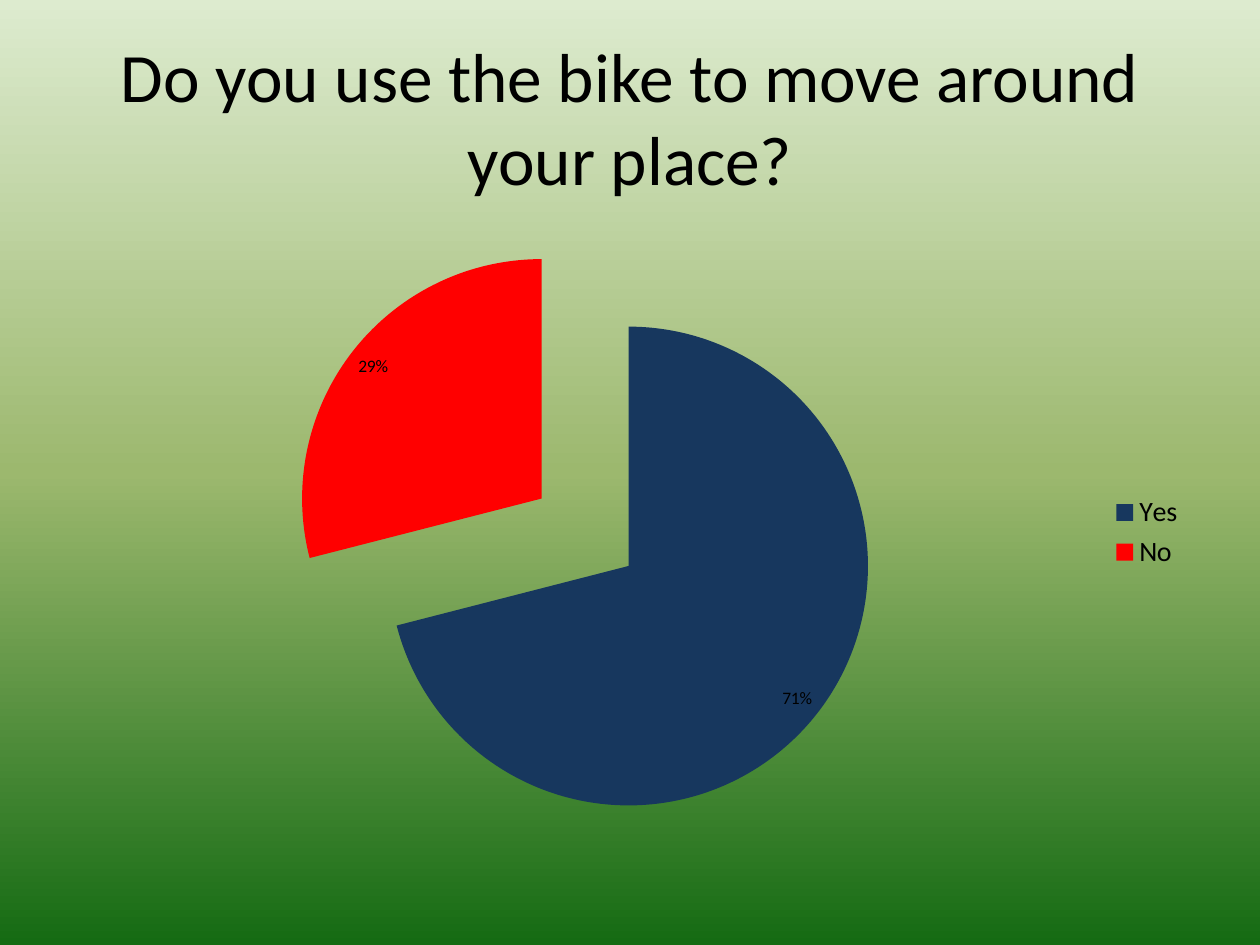
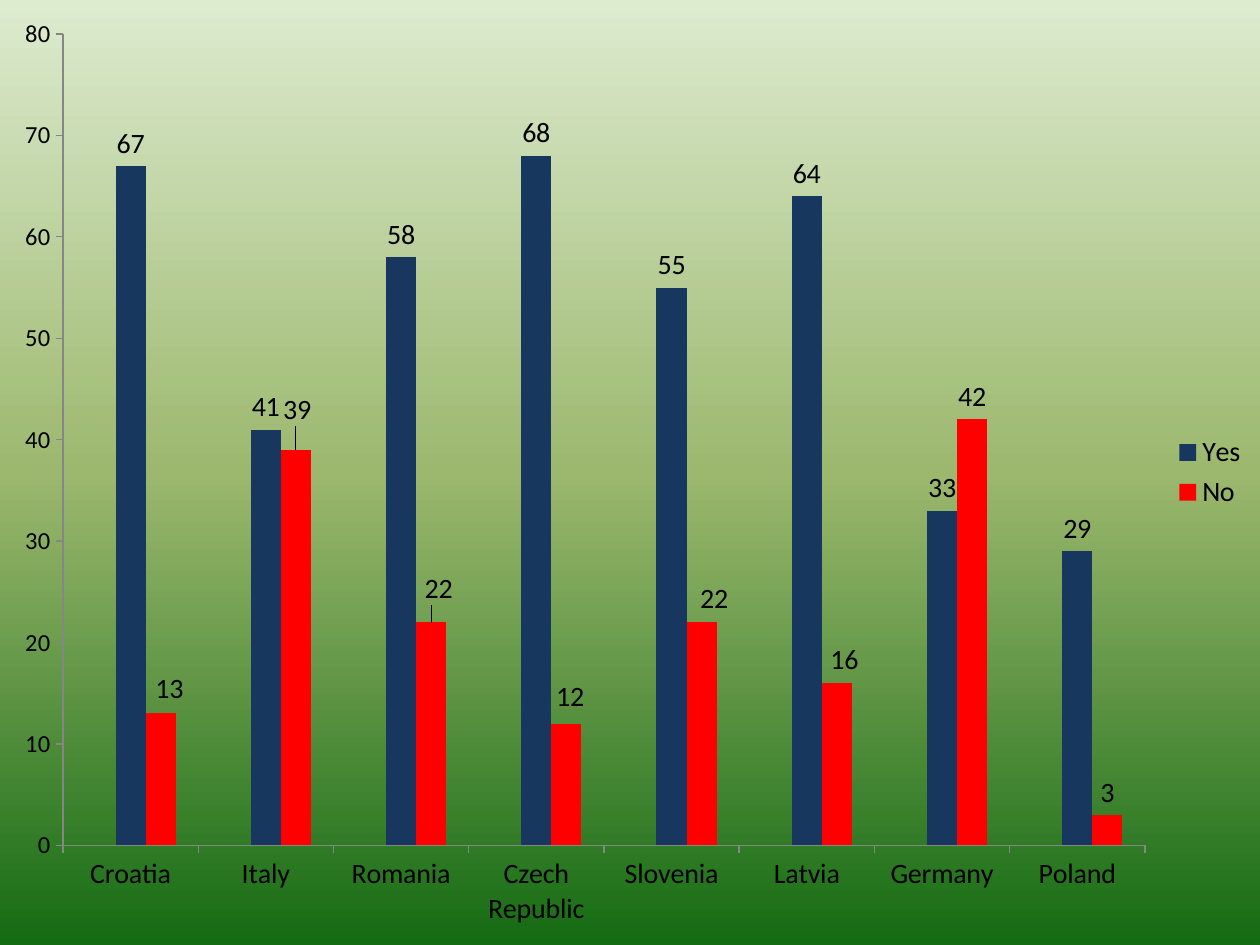
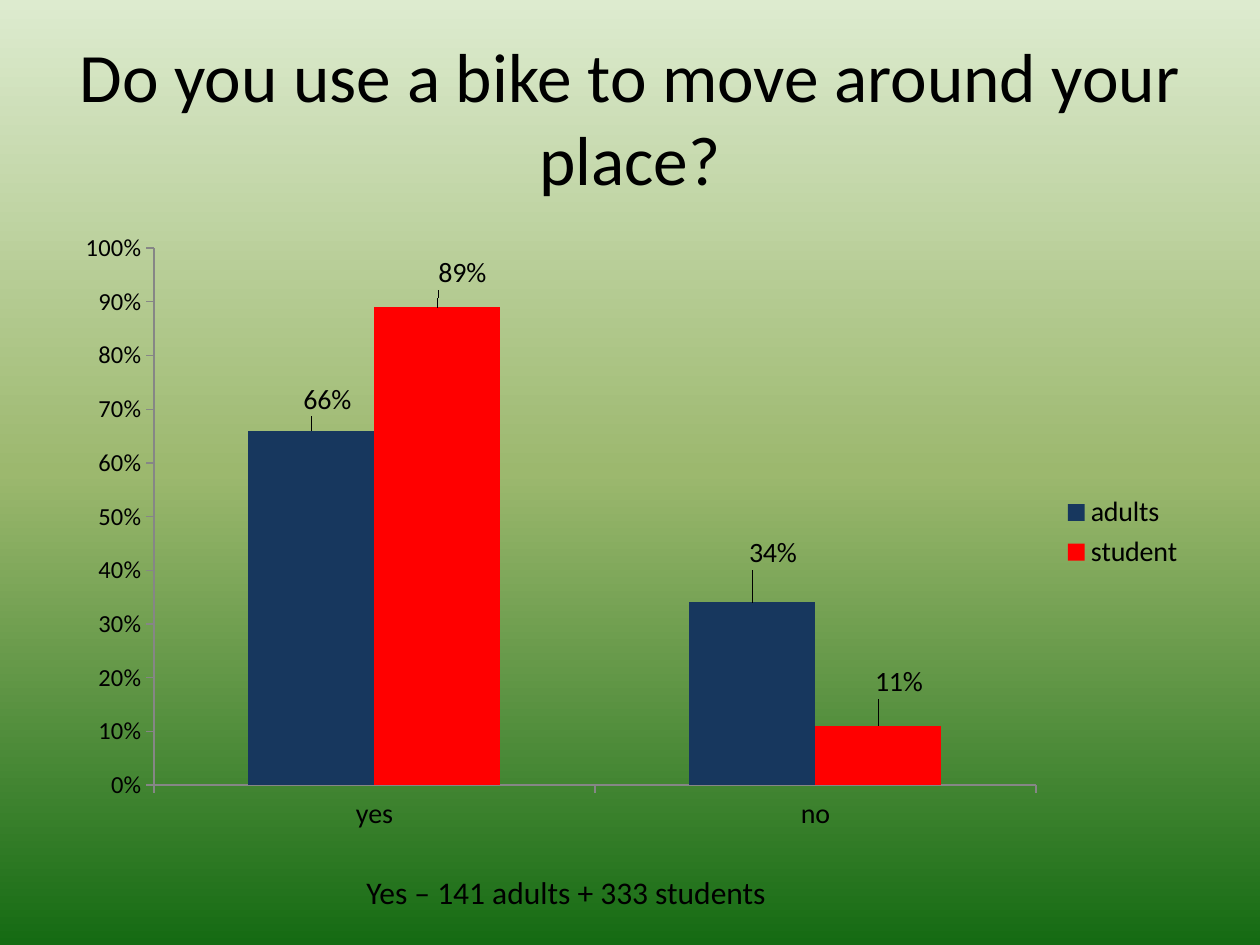
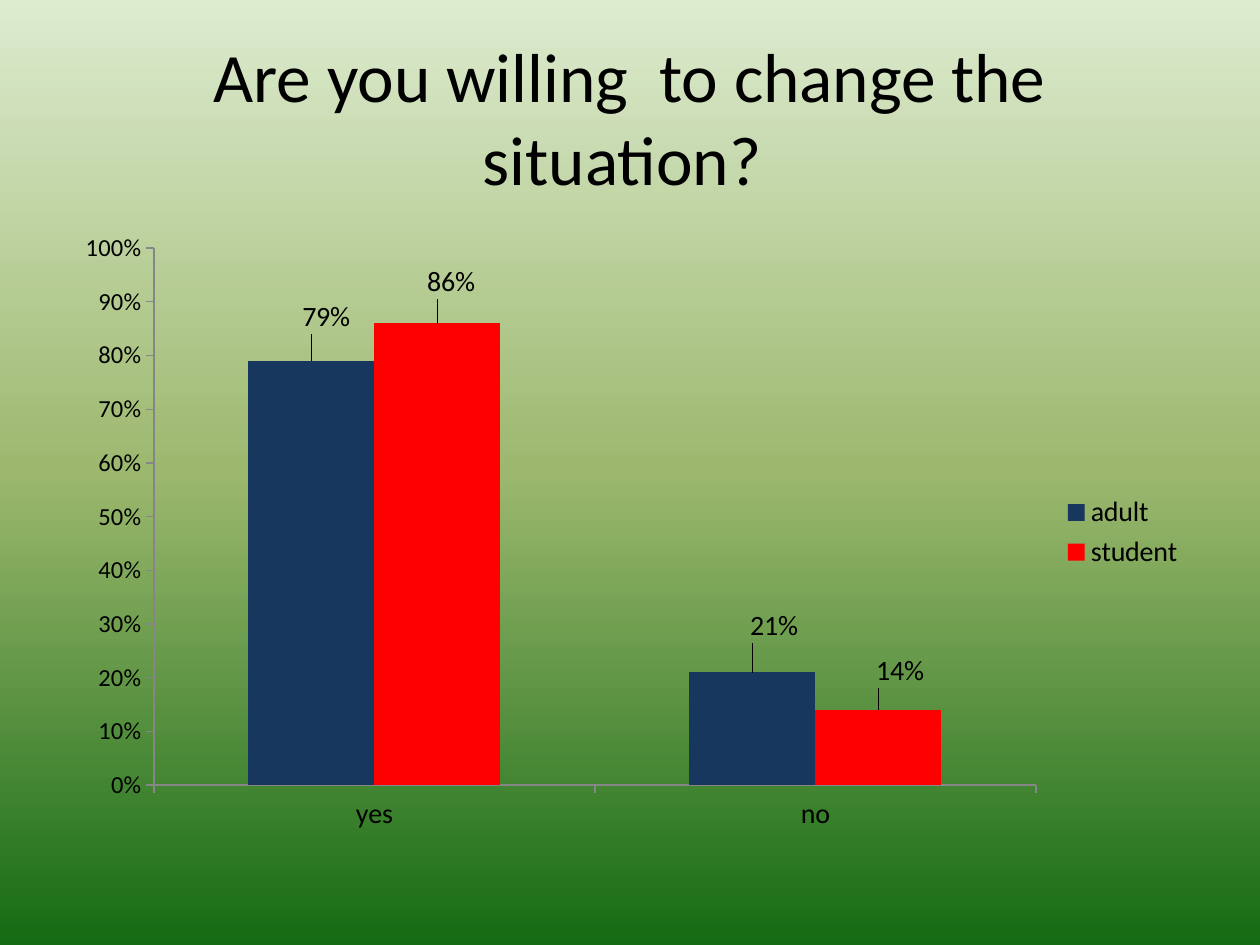
"""Build four slides of survey charts on bike use."""
from copy import deepcopy

from lxml import etree
from pptx import Presentation
from pptx.chart.data import CategoryChartData
from pptx.dml.color import RGBColor
from pptx.enum.chart import XL_CHART_TYPE as ChartType
from pptx.enum.chart import XL_LABEL_POSITION as LabelPosition
from pptx.enum.chart import XL_LEGEND_POSITION as LegendPosition
from pptx.enum.chart import XL_TICK_MARK as TickMark
from pptx.enum.text import MSO_ANCHOR, PP_ALIGN
from pptx.oxml import parse_xml
from pptx.oxml.ns import nsdecls, qn
from pptx.util import Inches, Pt

COLORS = {
    "text": "000000", "axis": "868686", "blank": "4F81BD", "first": "17375E", "second": "FF0000",
    "sky": "DDEBCF", "meadow": "9CB86E", "grass": "156B13",
}
RGB = {name: RGBColor.from_string(value) for name, value in COLORS.items()}
FONT = "Calibri"
BODY = (0.5, 1.75, 9, 4.95)
FULL = (0, 0, 10, 7.5)

prs = Presentation()
prs.slide_width, prs.slide_height = Inches(10), Inches(7.5)
title_only, blank = prs.slide_layouts[5], prs.slide_layouts[6]

backdrop = prs.slide_master.background.fill
backdrop.gradient()
backdrop.gradient_angle = 270
stop_list = prs.slide_master.element.xpath("./p:cSld/p:bg//a:gsLst")[0]
stop_list.insert(1, deepcopy(stop_list[0]))
for stop, position, name in zip(backdrop.gradient_stops, (0, 0.5, 1), ("sky", "meadow", "grass")):
    stop.position = position
    stop.color.rgb = RGB[name]


def add_titled_slide(question):
    slide = prs.slides.add_slide(title_only)
    title = slide.shapes.title
    title.left, title.top, title.width, title.height = map(Inches, (0.5, 0.3, 9, 1.25))
    title.text_frame.text = question
    title.text_frame.vertical_anchor = MSO_ANCHOR.MIDDLE
    heading = title.text_frame.paragraphs[0]
    heading.alignment = PP_ALIGN.CENTER
    heading.font.name, heading.font.size = FONT, Pt(39.6)
    heading.font.color.rgb = RGB["text"]
    return slide


def add_survey_chart(slide, kind, place, answers, groups, number_format):
    data = CategoryChartData(number_format=number_format)
    data.categories = answers
    for name, values in groups:
        data.add_series(name, values)
    chart = slide.shapes.add_chart(kind, *map(Inches, place), data).chart
    chart.has_title = False
    chart.font.name, chart.font.size = FONT, Pt(10)
    chart.font.color.rgb = RGB["text"]
    chart.has_legend = True
    chart.legend.position = LegendPosition.RIGHT
    chart.legend.include_in_layout = False
    chart.legend.font.size = Pt(16)
    return chart


bike_slide = add_titled_slide("Do you use the bike to move around your place?")
pie = add_survey_chart(bike_slide, ChartType.PIE, BODY, ["Yes", "No"], [("Series 1", (0.71, 0.29))], "0%")
shares = pie.plots[0].series[0]
shares._element.find(qn("c:tx")).addnext(parse_xml(f'<c:explosion {nsdecls("c")} val="23"/>'))
for index, name in enumerate(("first", "second")):
    wedge = shares.points[index].format.fill
    wedge.solid()
    wedge.fore_color.rgb = RGB[name]
share_labels = shares.data_labels
share_labels.show_value = True
share_labels.number_format, share_labels.number_format_is_linked = "0%", False
share_labels.position = LabelPosition.INSIDE_END

country_slide = prs.slides.add_slide(blank)
adult_slide = add_titled_slide("Do you use a bike to move around your place?")
change_slide = add_titled_slide("Are you willing  to change the situation? ")

countries = ["Croatia", "Italy", "Romania", "Czech Republic", "Slovenia", "Latvia", "Germany", "Poland"]
country_groups = [
    ("Series 1", [None] * len(countries)),
    ("Yes", (67, 41, 58, 68, 55, 64, 33, 29)),
    ("No", (13, 39, 22, 12, 22, 16, 42, 3)),
]
adult_groups = [("adults", (0.66, 0.34)), ("student", (0.89, 0.11))]
change_groups = [("adult", (0.79, 0.21)), ("student", (0.86, 0.14))]

country_shifts = {
    "No": [(0.007, -0.002), (0.001, -0.019), (0.006, -0.012), (0.003, -0.005), (0.01, -0.001), (0.006, -0.001)],
}
adult_shifts = {"adults": [(0.014, -0.014), (0.018, -0.043)], "student": [(0.022, -0.019), (0.018, -0.035)]}
change_shifts = {"adult": [(0.013, -0.034), (0.019, -0.038)], "student": [(0.012, -0.03), (0.019, -0.027)]}

column_charts = [
    (country_slide, FULL, countries, country_groups, "General", 80, country_shifts),
    (adult_slide, BODY, ["yes", "no"], adult_groups, "0%", 1, adult_shifts),
    (change_slide, BODY, ["yes", "no"], change_groups, "0%", 1, change_shifts),
]
for slide, place, answers, groups, number_format, top, shifts in column_charts:
    columns = add_survey_chart(slide, ChartType.COLUMN_CLUSTERED, place, answers, groups, number_format)
    plot = columns.plots[0]
    plot.gap_width, plot.overlap, plot.vary_by_categories = 150, 0, False
    for axis, size in ((columns.category_axis, 16), (columns.value_axis, 14)):
        axis.has_major_gridlines = False
        axis.major_tick_mark, axis.minor_tick_mark = TickMark.OUTSIDE, TickMark.NONE
        axis.tick_labels.font.size = Pt(size)
        axis.format.line.color.rgb = RGB["axis"]
        axis.format.line.width = Pt(0.75)
    scale = columns.value_axis
    scale.minimum_scale, scale.maximum_scale = 0, top
    scale.major_unit = 10 if top == 80 else 0.1
    scale.tick_labels.number_format = number_format
    scale.tick_labels.number_format_is_linked = False

    names = ("blank", "first", "second")[-len(groups):]
    for group, name in zip(plot.series, names):
        group.invert_if_negative = False
        group.format.fill.solid()
        group.format.fill.fore_color.rgb = RGB[name]
        if name == "blank":
            continue
        labels = group.data_labels
        labels.show_value = True
        labels.position = LabelPosition.OUTSIDE_END
        labels.font.size = Pt(16)
        labels.number_format, labels.number_format_is_linked = number_format, False
        for index, (across, down) in enumerate(shifts.get(group.name, [])):
            label = group.points[index].data_label
            label.font.size = Pt(16)
            label.position = LabelPosition.OUTSIDE_END
            label_xml = group._element.xpath(f"./c:dLbls/c:dLbl[c:idx/@val='{index}']")[0]
            layout = etree.Element(qn("c:layout"))
            manual = etree.SubElement(layout, qn("c:manualLayout"))
            etree.SubElement(manual, qn("c:x"), val=str(across))
            etree.SubElement(manual, qn("c:y"), val=str(down))
            label_xml.find(qn("c:idx")).addnext(layout)

    if "blank" in names:
        hidden_entry = parse_xml(
            f'<c:legendEntry {nsdecls("c")}><c:idx val="0"/><c:delete val="1"/></c:legendEntry>'
        )
        columns.legend._element.find(qn("c:legendPos")).addnext(hidden_entry)

total = adult_slide.shapes.add_textbox(*map(Inches, (2.81, 6.88, 3.44, 0.4))).text_frame
total.word_wrap = False
total.text = "Yes – 141 adults + 333 students"
total_line = total.paragraphs[0]
total_line.font.name, total_line.font.size = FONT, Pt(18)
total_line.font.color.rgb = RGB["text"]

prs.save("out.pptx")
